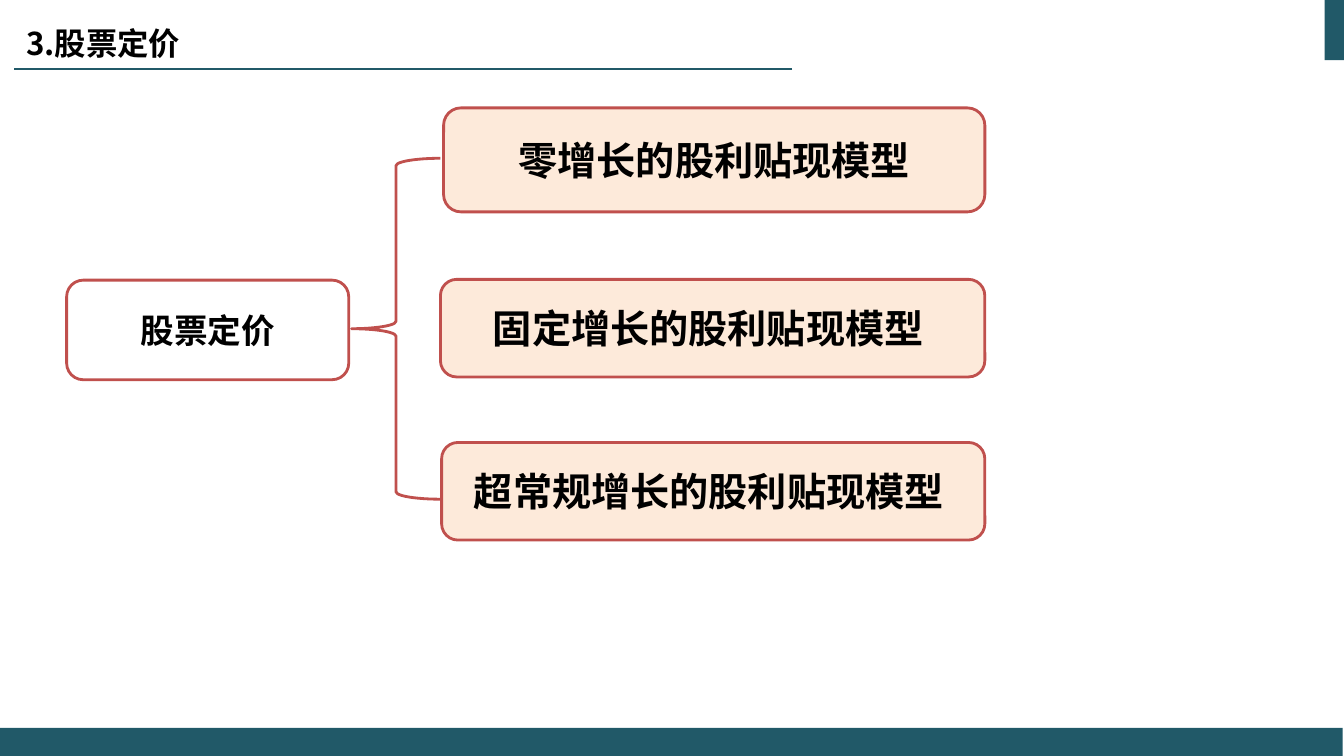
"""Build the stock pricing slide: one topic branching into three dividend models."""
import pptx
import pptx.dml.color
import pptx.enum.shapes
import pptx.enum.text
import pptx.oxml
import pptx.oxml.ns
import pptx.util

Cm = pptx.util.Cm
Pt = pptx.util.Pt
SHAPES = pptx.enum.shapes.MSO_SHAPE
TEAL, RED, PEACH, WHITE, BLACK = "215968", "C0504D", "FDEADA", "FFFFFF", "000000"
CJK_FONT = "Noto Sans CJK SC"


def color(hex_string):
    return pptx.dml.color.RGBColor.from_string(hex_string)


def add_run(paragraph, text, size, font_name):
    run = paragraph.add_run()
    run.text = text
    run.font.size = Pt(size)
    run.font.bold = True
    run.font.color.rgb = color(BLACK)
    run.font.name = font_name
    east_asian = pptx.oxml.parse_xml(
        f'<a:ea {pptx.oxml.ns.nsdecls("a")} typeface="{CJK_FONT}"/>')
    run.font._element.append(east_asian)
    return run


presentation = pptx.Presentation()
presentation.slide_width = Cm(33.87)
presentation.slide_height = Cm(19.05)
slide = presentation.slides.add_slide(presentation.slide_layouts[6])

for left, top, width, height in [(0, 18.34, 33.84, 0.71), (33.38, 0, 0.49, 1.52)]:
    band = slide.shapes.add_shape(SHAPES.RECTANGLE, Cm(left), Cm(top), Cm(width), Cm(height))
    band.shadow.inherit = False
    band.fill.solid()
    band.fill.fore_color.rgb = color(TEAL)
    band.line.fill.background()

title_rule = slide.shapes.add_connector(
    pptx.enum.shapes.MSO_CONNECTOR.STRAIGHT, Cm(19.96), Cm(1.73), Cm(0.36), Cm(1.73))
title_rule.line.color.rgb = color(TEAL)
title_rule.line.width = Pt(1.5)
title_rule._element.spPr.append(
    pptx.oxml.parse_xml(f'<a:effectLst {pptx.oxml.ns.nsdecls("a")}/>'))

title = slide.shapes.add_textbox(Cm(0.41), Cm(0.33), Cm(8.41), Cm(1.4))
title.text_frame.word_wrap = True
title.text_frame.vertical_anchor = pptx.enum.text.MSO_ANCHOR.BOTTOM
title_paragraph = title.text_frame.paragraphs[0]
title_paragraph.line_spacing = 0.9
title_run = add_run(title_paragraph, "3.股票定价", 28, CJK_FONT)
title_run.font._element.set("cap", "small")

diagram = [
    (SHAPES.ROUNDED_RECTANGLE, 1.68, 7.06, 7.11, 2.51, WHITE, "股票定价", 24),
    (SHAPES.LEFT_BRACE, 8.86, 3.99, 2.24, 8.59, WHITE, "", 24),
    (SHAPES.ROUNDED_RECTANGLE, 11.18, 2.72, 13.64, 2.62, PEACH, "零增长的股利贴现模型", 28),
    (SHAPES.ROUNDED_RECTANGLE, 11.1, 7.04, 13.72, 2.46, PEACH, "固定增长的股利贴现模型 ", 28),
    (SHAPES.ROUNDED_RECTANGLE, 11.13, 11.15, 13.69, 2.46, PEACH, "超常规增长的股利贴现模型 ", 28),
]
for kind, left, top, width, height, fill, text, size in diagram:
    shape = slide.shapes.add_shape(kind, Cm(left), Cm(top), Cm(width), Cm(height))
    shape.shadow.inherit = False
    shape.fill.solid()
    shape.fill.fore_color.rgb = color(fill)
    shape.line.color.rgb = color(RED)
    shape.line.width = Pt(2)
    if text:
        shape.text_frame.word_wrap = True
        shape.text_frame.vertical_anchor = pptx.enum.text.MSO_ANCHOR.MIDDLE
        paragraph = shape.text_frame.paragraphs[0]
        paragraph.alignment = pptx.enum.text.PP_ALIGN.CENTER
        add_run(paragraph, text, size, "Calibri")

presentation.save("out.pptx")
